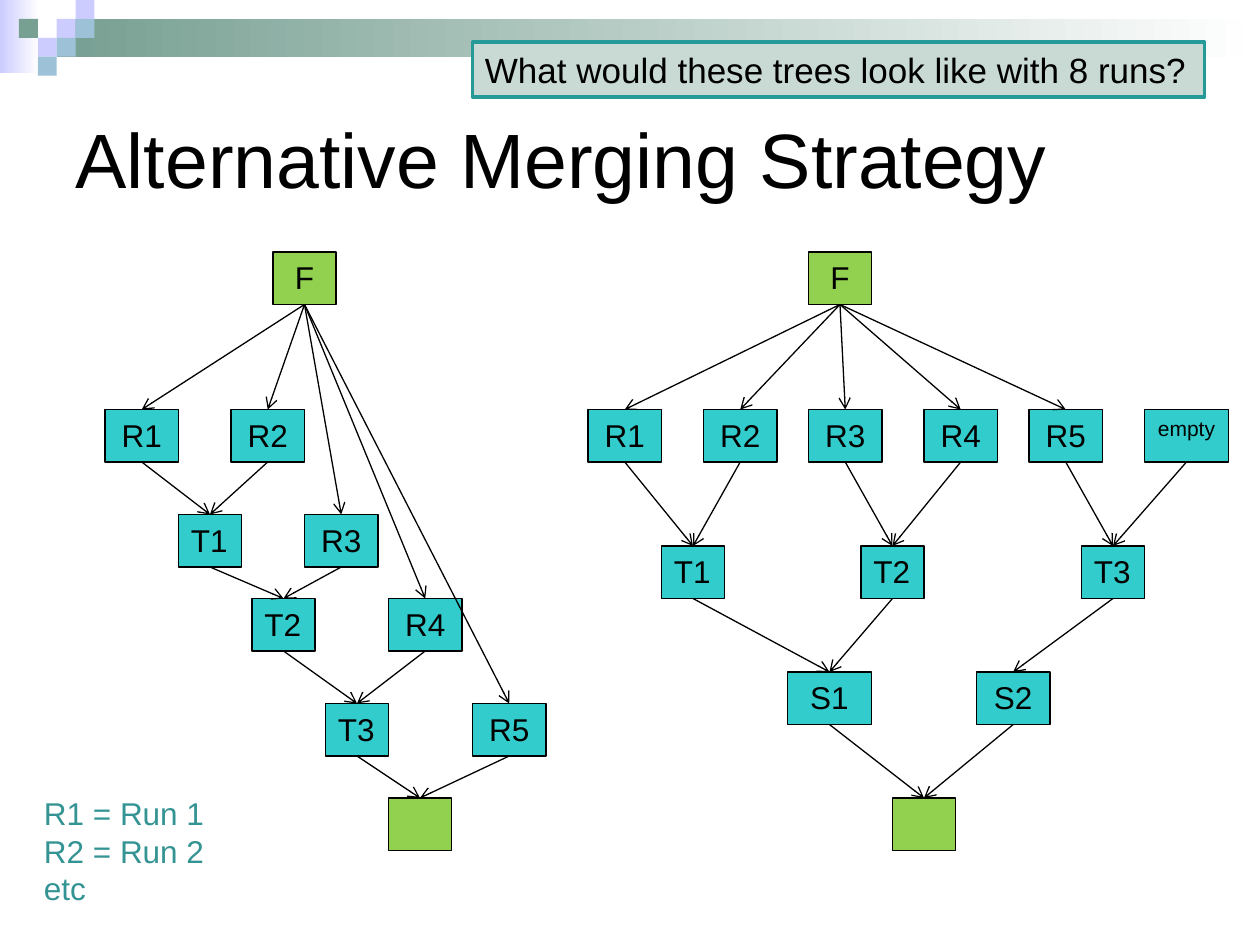
from dataclasses import dataclass

from lxml.etree import SubElement
from pptx import Presentation
from pptx.dml.color import RGBColor
from pptx.enum.shapes import MSO_CONNECTOR, MSO_SHAPE
from pptx.enum.text import MSO_ANCHOR, MSO_AUTO_SIZE, PP_ALIGN
from pptx.oxml.ns import qn
from pptx.util import Pt

BLACK, WHITE = "000000", "FFFFFF"
TEAL, GREEN = "33CCCC", "92D050"
LAVENDER, BLUE, SAGE = "CCCCFF", "9DC2D7", "779F92"
FONT = "Arial"
BOX_HEIGHT = 30
TOP_SITE, BOTTOM_SITE = 0, 2
TILE = 10.8


@dataclass(frozen=True)
class Node:
    key: str
    left: float
    top: float
    width: float = 42
    fill: str = TEAL
    size: float = 18
    align: PP_ALIGN = PP_ALIGN.CENTER


@dataclass(frozen=True)
class Tree:
    nodes: list[Node]
    arrows: dict[str, str]  # source key -> space-separated target keys


def start(left: float, top: float) -> Node:
    return Node("F", left, top, 36, GREEN)


def result(left: float, top: float) -> Node:
    """The unlabelled box that holds the merged file."""
    return Node("", left, top, 36, GREEN)


def merged(key: str, left: float, top: float) -> Node:
    return Node(key, left, top, 36, align=PP_ALIGN.LEFT)


RUNS_TOP = 234
ONE_BY_ONE = Tree(
    [start(156, 144),
     Node("R1", 60, RUNS_TOP), Node("R2", 132, RUNS_TOP),
     merged("T1", 102, 294), Node("R3", 174, 294),
     merged("T2", 144, 342), Node("R4", 222, 342),
     merged("T3", 186, 402), Node("R5", 270, 402),
     result(222, 456)],
    {"F": "R1 R2 R3 R4 R5", "R1": "T1", "R2": "T1", "T1": "T2", "R3": "T2",
     "T2": "T3", "R4": "T3"},
)
IN_PAIRS = Tree(
    [start(462, 144),
     *(Node(f"R{i}", left, RUNS_TOP)
       for i, left in enumerate((336, 402, 462, 528, 588), 1)),
     Node("empty", 654, RUNS_TOP, 48, size=12),
     *(merged(f"T{i}", left, 312) for i, left in enumerate((378, 492, 618), 1)),
     Node("S1", 450, 384, 48), Node("S2", 558, 384),
     result(510, 456)],
    {"F": "R1 R2 R3 R4 R5", "R1": "T1", "R2": "T1", "R3": "T2", "R4": "T2",
     "R5": "T3", "empty": "T3", "T1": "S1", "T2": "S1", "T3": "S2"},
)
LAST_MERGES = {id(ONE_BY_ONE): ("T3", "R5"), id(IN_PAIRS): ("S1", "S2")}

# Column, row and colour of each corner tile
TILES = [(3, 1, LAVENDER), (4, 0, LAVENDER), (4, 1, BLUE), (2, 2, LAVENDER),
         (1, 1, SAGE), (3, 2, BLUE), (2, 3, BLUE)]


def rgb(color: str) -> RGBColor:
    return RGBColor.from_string(color)


def add_box(slide, left: float, top: float, width: float, height: float,
            fill: str, line: str | None = None, line_width: float = 0.75):
    box = slide.shapes.add_shape(
        MSO_SHAPE.RECTANGLE, Pt(left), Pt(top), Pt(width), Pt(height))
    box.shadow.inherit = False
    box.fill.solid()
    box.fill.fore_color.rgb = rgb(fill)
    if line:
        box.line.color.rgb = rgb(line)
        box.line.width = Pt(line_width)
    else:
        box.line.fill.background()
    return box


def write(frame, text: str, size: float, color: str = BLACK,
          align: PP_ALIGN = PP_ALIGN.LEFT, anchor: MSO_ANCHOR = MSO_ANCHOR.TOP) -> None:
    frame.text = text
    frame.vertical_anchor = anchor
    for paragraph in frame.paragraphs:
        paragraph.alignment = align
        paragraph.font.name = FONT
        paragraph.font.size = Pt(size)
        paragraph.font.color.rgb = rgb(color)


def fit_to_text(frame) -> None:
    frame.word_wrap = False
    frame.auto_size = MSO_AUTO_SIZE.SHAPE_TO_FIT_TEXT


def add_fading_bar(slide, left: float, top: float, width: float, height: float,
                   color: str) -> None:
    """Add a bar that fades to white from left to right."""
    bar = add_box(slide, left, top, width, height, color)
    bar.fill.gradient()
    bar.fill.gradient_angle = 0
    for stop, shade in zip(bar.fill.gradient_stops, (color, WHITE)):
        stop.color.rgb = rgb(shade)


def add_arrow(slide, source, target) -> None:
    arrow = slide.shapes.add_connector(MSO_CONNECTOR.STRAIGHT, 0, 0, 0, 0)
    arrow.begin_connect(source, BOTTOM_SITE)
    arrow.end_connect(target, TOP_SITE)
    arrow.line.color.rgb = rgb(BLACK)
    arrow.line.width = Pt(0.75)
    SubElement(arrow.line._get_or_add_ln(), qn("a:tailEnd"), type="arrow")
    SubElement(arrow._element.spPr, qn("a:effectLst"))


def draw_tree(slide, tree: Tree) -> None:
    boxes = {}
    for node in tree.nodes:
        box = add_box(slide, node.left, node.top, node.width, BOX_HEIGHT,
                      node.fill, BLACK)
        if node.key:
            write(box.text_frame, node.key, node.size, align=node.align)
        boxes[node.key] = box
    for source, targets in tree.arrows.items():
        for target in targets.split():
            add_arrow(slide, boxes[source], boxes[target])
    for source in LAST_MERGES[id(tree)]:
        add_arrow(slide, boxes[source], boxes[""])


def draw_corner(slide) -> None:
    add_fading_bar(slide, 0, 0, 22.3, 41.8, LAVENDER)
    add_fading_bar(slide, 3 * TILE, TILE, 720 - 3 * TILE, 2 * TILE, SAGE)
    for column, row, color in TILES:
        add_box(slide, column * TILE, row * TILE, TILE, TILE, color)


def main() -> None:
    deck = Presentation()
    deck.slide_width, deck.slide_height = Pt(720), Pt(540)
    slide = deck.slides.add_slide(deck.slide_layouts[5])
    draw_corner(slide)

    title = slide.shapes.title
    title.left, title.top, title.width, title.height = Pt(36), Pt(36), Pt(648), Pt(108)
    write(title.text_frame, "Alternative Merging Strategy", 44,
          anchor=MSO_ANCHOR.MIDDLE)
    title.text_frame.auto_size = MSO_AUTO_SIZE.NONE

    for tree in (ONE_BY_ONE, IN_PAIRS):
        draw_tree(slide, tree)

    legend = slide.shapes.add_textbox(Pt(18), Pt(450), Pt(107.3), Pt(72.7))
    write(legend.text_frame, "R1 = Run 1\nR2 = Run 2\netc", 18, "349393")
    fit_to_text(legend.text_frame)

    question = add_box(slide, 270, 24, 418.3, 31.5, "C9D9D3", "269999", 2)
    write(question.text_frame, "What would these trees look like with 8 runs?", 20)
    fit_to_text(question.text_frame)

    deck.save("out.pptx")


if __name__ == "__main__":
    main()
